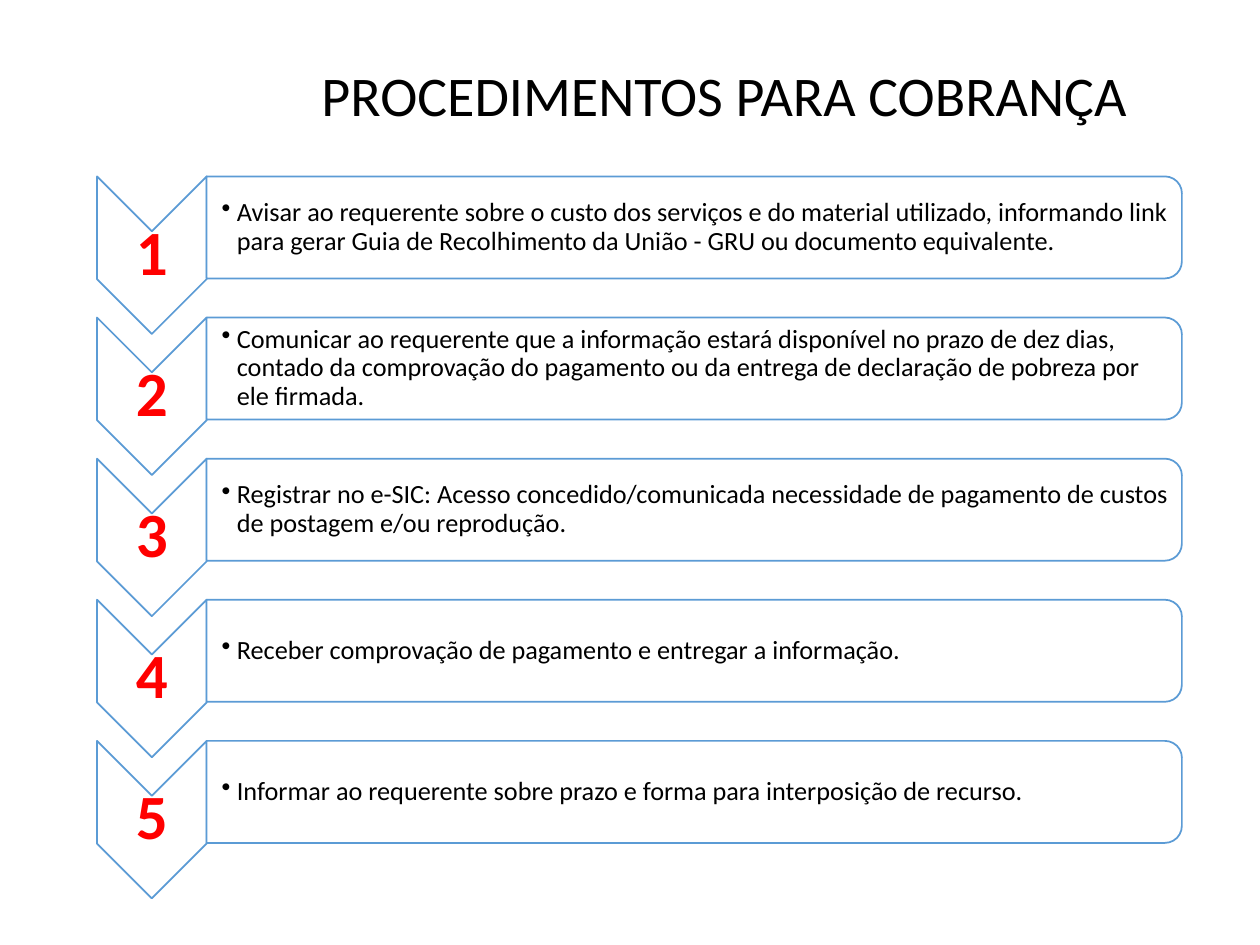
"""Build the slide that lists the five steps for charging costs."""
from dataclasses import dataclass

from lxml import etree
from pptx import Presentation
from pptx.dml.color import RGBColor
from pptx.enum.shapes import MSO_SHAPE
from pptx.enum.text import MSO_ANCHOR, PP_ALIGN
from pptx.oxml.ns import qn
from pptx.slide import Slide
from pptx.text.text import _Paragraph
from pptx.util import Inches, Pt

ARROW = MSO_SHAPE.CHEVRON
PANEL = MSO_SHAPE.ROUND_2_SAME_RECTANGLE
MIDDLE, TOP = MSO_ANCHOR.MIDDLE, MSO_ANCHOR.TOP
LEFT, CENTER = PP_ALIGN.LEFT, PP_ALIGN.CENTER


@dataclass(frozen=True)
class Theme:
    font: str = "Calibri"
    ink: RGBColor = RGBColor(0, 0, 0)
    mark: RGBColor = RGBColor(255, 0, 0)
    fill: RGBColor = RGBColor(255, 255, 255)
    line: RGBColor = RGBColor(0x5B, 0x9B, 0xD5)
    title: int = 32
    digit: int = 36
    body: int = 15


@dataclass(frozen=True)
class Box:
    x: float
    y: float
    w: float
    h: float


@dataclass(frozen=True)
class Style:
    size: int
    color: RGBColor
    bold: bool = False
    align: PP_ALIGN = CENTER
    anchor: MSO_ANCHOR = MIDDLE
    inset: tuple[float, float] = (0.03, 0.03)
    lead: float = 0.9
    bullet: bool = False


THEME = Theme()
TITLE = Style(THEME.title, THEME.ink, anchor=TOP, inset=(0.1, 0.05), lead=1.0)
DIGIT = Style(THEME.digit, THEME.mark, bold=True)
BODY = Style(THEME.body, THEME.ink, align=LEFT, inset=(0.12, 0.01), bullet=True)

START, PITCH = 1.4, 1.12
ARROW_X, ARROW_W, ARROW_H = 0.77, 0.87, 1.25
PANEL_X, PANEL_W, PANEL_H = ARROW_X + ARROW_W, 7.74, 0.81
DIGIT_H = 0.37
TEXT_W, TEXT_H = 7.7, 0.73

STEPS = (
    "Avisar ao requerente sobre o custo dos serviços e do material utilizado, "
    "informando link para gerar Guia de Recolhimento da União - GRU ou "
    "documento equivalente.",
    "Comunicar ao requerente que a informação estará disponível no prazo de "
    "dez dias, contado da comprovação do pagamento ou da entrega de "
    "declaração de pobreza por ele firmada.",
    "Registrar no e-SIC: Acesso concedido/comunicada necessidade de pagamento "
    "de custos de postagem e/ou reprodução.",
    "Receber comprovação de pagamento e entregar a informação.",
    "Informar ao requerente sobre prazo e forma para interposição de recurso.",
)


def add_turned(slide: Slide, kind: MSO_SHAPE, box: Box) -> None:
    """Draw a shape turned by 90 degrees that fills the box."""
    x = box.x + (box.w - box.h) / 2
    y = box.y + (box.h - box.w) / 2
    shape = slide.shapes.add_shape(
        kind, Inches(x), Inches(y), Inches(box.h), Inches(box.w))
    shape.rotation = 90
    shape.shadow.inherit = False
    shape.fill.solid()
    shape.fill.fore_color.rgb = THEME.fill
    shape.line.color.rgb = THEME.line
    shape.line.width = Pt(1)


def add_bullet(para: _Paragraph) -> None:
    """Give the paragraph a hanging bullet."""
    para.level = 1
    props = para._p.get_or_add_pPr()
    props.set("marL", str(Inches(0.12)))
    props.set("indent", str(Inches(-0.12)))
    etree.SubElement(props, qn("a:buChar")).set("char", "•")


def add_text(slide: Slide, box: Box, text: str, style: Style) -> None:
    """Place one paragraph of styled text in the box."""
    label = slide.shapes.add_textbox(
        Inches(box.x), Inches(box.y), Inches(box.w), Inches(box.h))
    frame = label.text_frame
    frame.word_wrap = True
    frame.vertical_anchor = style.anchor
    side, edge = style.inset
    frame.margin_left = Inches(side)
    frame.margin_right = frame.margin_top = frame.margin_bottom = Inches(edge)
    if style.anchor == TOP:
        frame.margin_right = Inches(side)
    para = frame.paragraphs[0]
    if style.bullet:
        add_bullet(para)
    para.alignment = style.align
    para.line_spacing = style.lead
    run = para.add_run()
    run.text = text
    run.font.name = THEME.font
    run.font.size = Pt(style.size)
    run.font.bold = style.bold
    run.font.color.rgb = style.color


def add_step(slide: Slide, index: int, text: str) -> None:
    """Draw one numbered arrow with its text panel."""
    y = START + index * PITCH
    add_turned(slide, ARROW, Box(ARROW_X, y, ARROW_W, ARROW_H))
    digit = Box(ARROW_X, y + (ARROW_H - DIGIT_H) / 2, ARROW_W, DIGIT_H)
    add_text(slide, digit, str(index + 1), DIGIT)
    add_turned(slide, PANEL, Box(PANEL_X, y, PANEL_W, PANEL_H))
    body = Box(PANEL_X, y + (PANEL_H - TEXT_H) / 2, TEXT_W, TEXT_H)
    add_text(slide, body, text, BODY)


def main() -> None:
    """Build and save the slide."""
    deck = Presentation()
    deck.slide_width, deck.slide_height = Inches(10), Inches(7.5)
    slide = deck.slides.add_slide(deck.slide_layouts[6])
    add_text(slide, Box(2.12, 0.43, 7.26, 0.64),
             "PROCEDIMENTOS PARA COBRANÇA", TITLE)
    for index, text in enumerate(STEPS):
        add_step(slide, index, text)
    deck.save("out.pptx")


if __name__ == "__main__":
    main()
